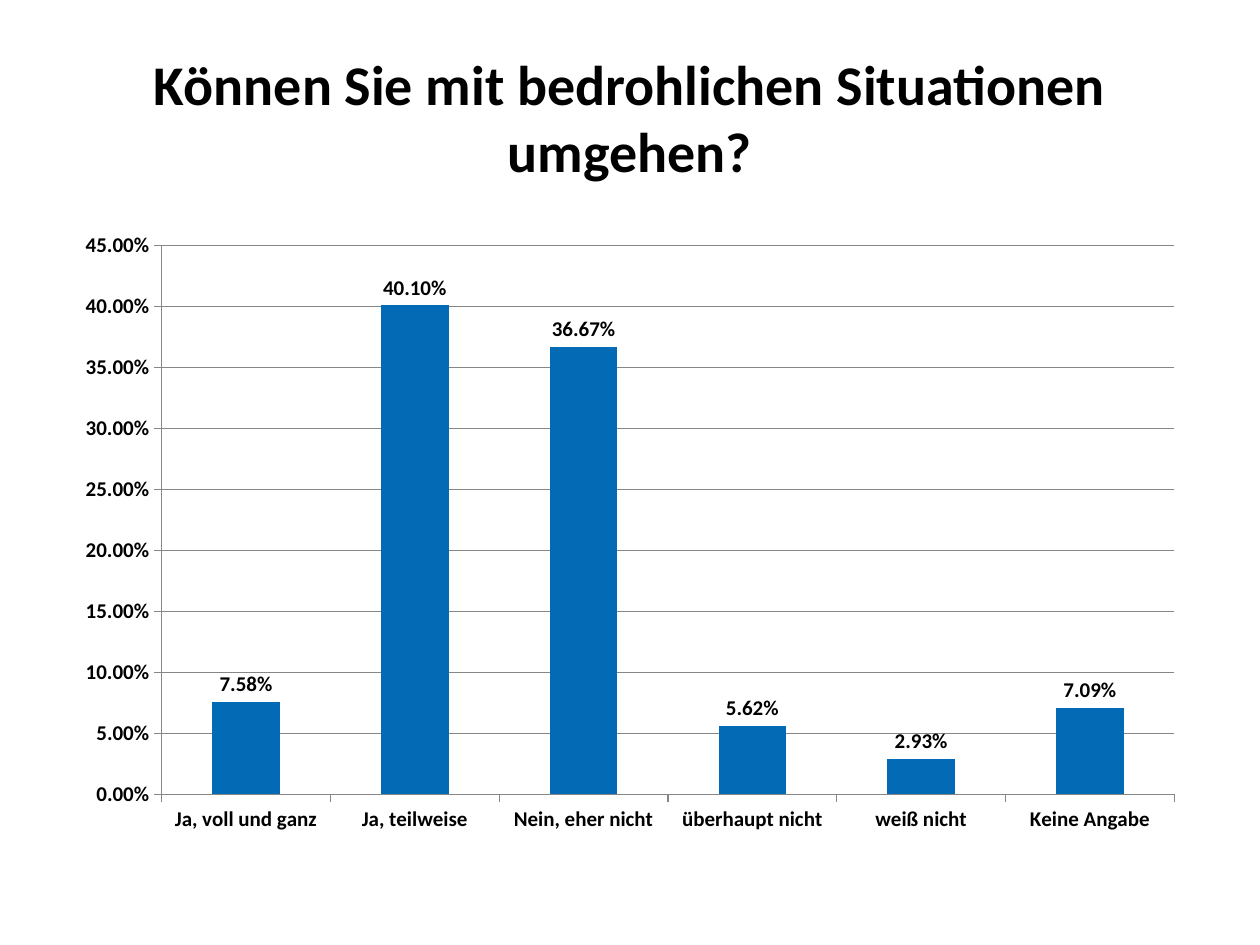
from pptx import Presentation
from pptx.chart.data import CategoryChartData
from pptx.dml.color import RGBColor
from pptx.enum.chart import XL_CHART_TYPE, XL_LABEL_POSITION, XL_TICK_MARK
from pptx.enum.text import MSO_ANCHOR, PP_ALIGN
from pptx.util import Inches, Pt

FONT = "Calibri"
BLACK = "000000"
BLUE = "036AB5"
GRAY = "868686"
PERCENT = "0.00%"
ANSWERS = {
    "Ja, voll und ganz": 0.0758,
    "Ja, teilweise": 0.401,
    "Nein, eher nicht": 0.3667,
    "überhaupt nicht": 0.0562,
    "weiß nicht": 0.0293,
    "Keine Angabe": 0.0709,
}


def color(value):
    return RGBColor.from_string(value)


def style_font(font, size):
    font.name = FONT
    font.size = Pt(size)
    font.bold = True
    font.color.rgb = color(BLACK)


def style_line(line):
    line.color.rgb = color(GRAY)
    line.width = Pt(0.75)


def add_title(slide, text, left, top, width, height):
    box = slide.shapes.add_textbox(left, top, width, height)
    text_frame = box.text_frame
    text_frame.word_wrap = True
    text_frame.vertical_anchor = MSO_ANCHOR.MIDDLE
    text_frame.text = text
    paragraph = text_frame.paragraphs[0]
    paragraph.alignment = PP_ALIGN.CENTER
    style_font(paragraph.runs[0].font, 32)


def add_answer_chart(slide, answers, left, top, width, height):
    chart_data = CategoryChartData(number_format=PERCENT)
    chart_data.categories = list(answers)
    chart_data.add_series("Series 1", list(answers.values()))
    chart = slide.shapes.add_chart(
        XL_CHART_TYPE.COLUMN_CLUSTERED, left, top, width, height, chart_data
    ).chart
    chart.has_title = False
    chart.has_legend = False
    style_font(chart.font, 12)

    for axis in (chart.category_axis, chart.value_axis):
        axis.major_tick_mark = XL_TICK_MARK.OUTSIDE
        axis.minor_tick_mark = XL_TICK_MARK.NONE
        style_line(axis.format.line)

    value_axis = chart.value_axis
    value_axis.minimum_scale = 0
    value_axis.maximum_scale = 0.45
    value_axis.major_unit = 0.05
    value_axis.has_major_gridlines = True
    style_line(value_axis.major_gridlines.format.line)
    value_axis.tick_labels.number_format = PERCENT
    value_axis.tick_labels.number_format_is_linked = False

    plot = chart.plots[0]
    plot.gap_width = 150
    plot.vary_by_categories = False
    series = plot.series[0]
    series.format.fill.solid()
    series.format.fill.fore_color.rgb = color(BLUE)
    labels = series.data_labels
    labels.show_value = True
    labels.number_format = PERCENT
    labels.number_format_is_linked = False
    labels.position = XL_LABEL_POSITION.OUTSIDE_END
    style_font(labels.font, 12)


def main():
    presentation = Presentation()
    presentation.slide_width = Inches(10)
    presentation.slide_height = Inches(7.5)
    slide = presentation.slides.add_slide(presentation.slide_layouts[6])
    add_title(
        slide,
        "Können Sie mit bedrohlichen Situationen umgehen?",
        Inches(0.5), Inches(0.3), Inches(9), Inches(1.25),
    )
    add_answer_chart(
        slide, ANSWERS, Inches(0.5), Inches(1.75), Inches(9), Inches(4.95)
    )
    presentation.save("out.pptx")


if __name__ == "__main__":
    main()
